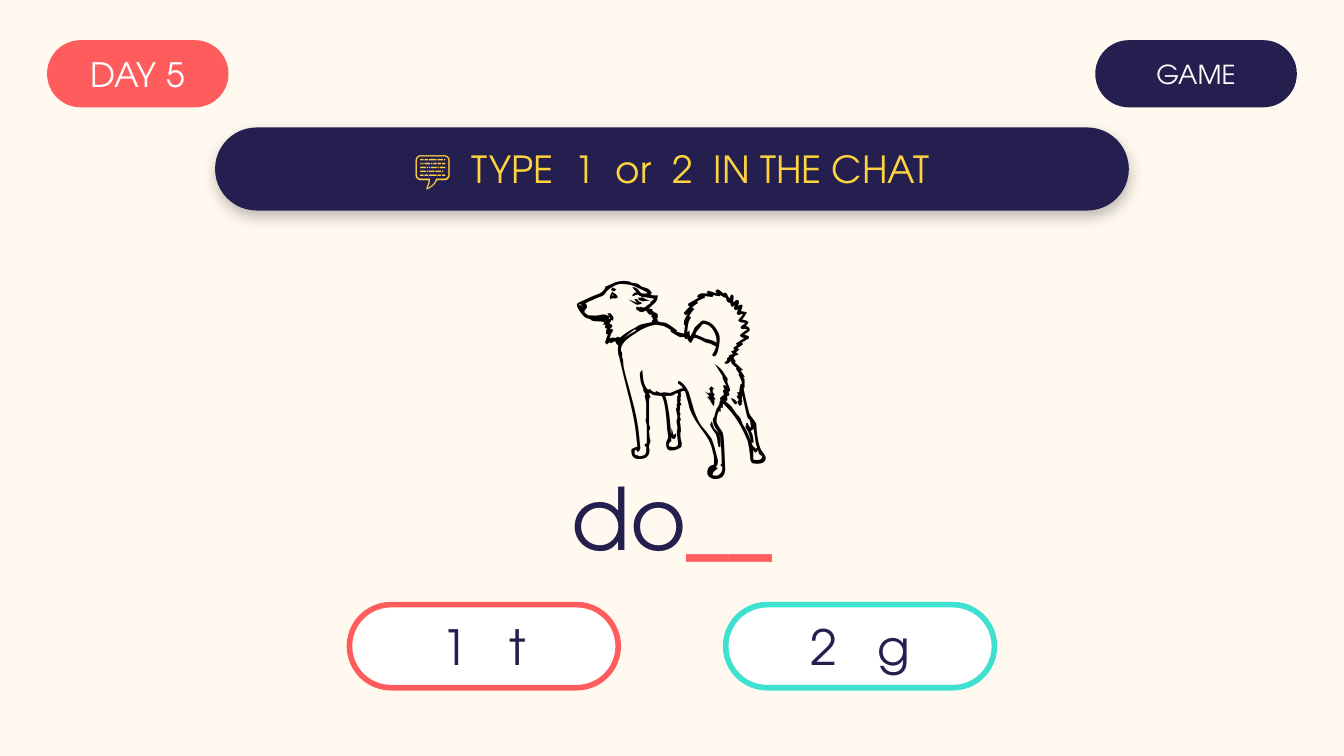
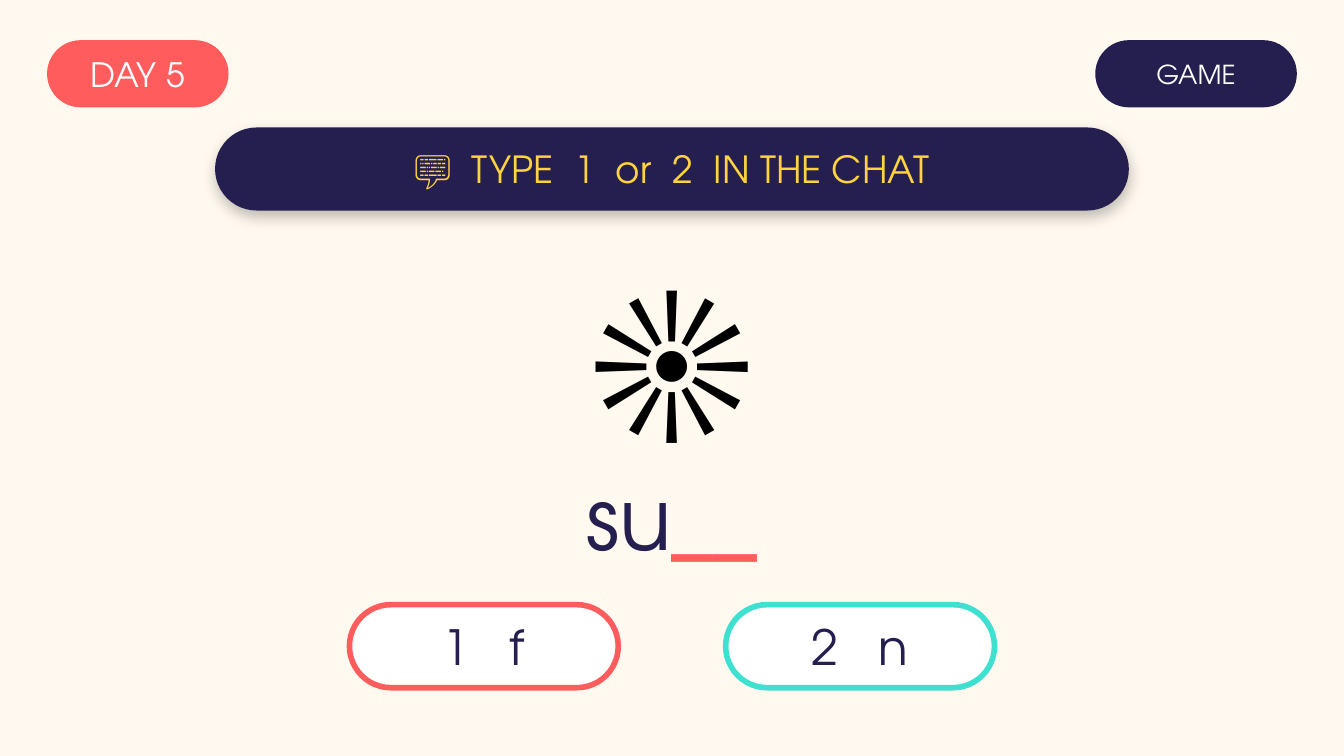
from dataclasses import dataclass
from itertools import chain

from lxml import etree
from pptx import Presentation
from pptx.dml.color import RGBColor
from pptx.enum.shapes import MSO_SHAPE
from pptx.enum.text import MSO_ANCHOR, PP_ALIGN
from pptx.oxml.ns import qn
from pptx.util import Cm, Pt

ROUNDED = MSO_SHAPE.ROUNDED_RECTANGLE
CENTER = PP_ALIGN.CENTER
TOP, MIDDLE = MSO_ANCHOR.TOP, MSO_ANCHOR.MIDDLE

CREAM, WHITE, BLACK = "FFF9EF", "FFFFFF", "000000"
NAVY, CORAL, TEAL, YELLOW = "241F4E", "FF5D5D", "3EE0CF", "FFD23F"
FONT, PICTURE_FONT = "TeX Gyre Adventor", "Calibri"

SLIDE_W, SLIDE_H = 25.4, 14.29
MARGIN = 0.89
BANNER_W, GAME_W = 17.27, 3.81
OPTION_W, OPTION_GAP = 5.08, 2.03
OPTION_COLORS = (CORAL, TEAL)
SPACE_EM = 0.277  # width of a space in the display font


@dataclass
class Box:
    left: float
    top: float
    width: float
    height: float

    def emu(self) -> tuple:
        return Cm(self.left), Cm(self.top), Cm(self.width), Cm(self.height)


@dataclass
class Span:
    text: str
    color: str
    bold: bool = False
    spacing: float = 0


@dataclass
class Pill:
    box: Box
    fill: str
    spans: list[Span]
    size: float
    line: str | None = None
    shadow: bool = False


@dataclass
class Question:
    picture: str
    stem: str
    letters: tuple[str, str]


QUESTIONS = [
    Question("🐕", "do", ("t", "g")),
    Question("☀️", "su", ("f", "n")),
]


def rgb(color: str) -> RGBColor:
    return RGBColor.from_string(color)


def spaced(words: list[str], color: str, size: float, spaces: int) -> list[Span]:
    """Join words with one space each, widened to the given number of spaces."""
    gap = Span(" ", color, spacing=(spaces - 1) * SPACE_EM * size)
    pairs = chain.from_iterable((gap, Span(word, color)) for word in words)
    return list(pairs)[1:]


def write(tf, spans: list[Span], *, size: float, font: str = FONT,
          anchor=MIDDLE, inset: bool = True) -> None:
    tf.word_wrap = True
    tf.vertical_anchor = anchor
    if not inset:
        tf.margin_left = tf.margin_right = tf.margin_top = tf.margin_bottom = 0
    p = tf.paragraphs[0]
    p.alignment = CENTER
    for span in spans:
        r = p.add_run()
        r.text = span.text
        r.font.name = font
        r.font.size = Pt(size)
        r.font.bold = span.bold
        r.font.color.rgb = rgb(span.color)
        if span.spacing:
            r.font._element.set("spc", str(round(span.spacing * 100)))


def add_text(s, box: Box, spans: list[Span], **style) -> None:
    write(s.shapes.add_textbox(*box.emu()).text_frame, spans, **style)


def add_soft_shadow(sp) -> None:
    effects = sp._element.spPr.find(qn("a:effectLst"))
    shadow = etree.SubElement(effects, qn("a:outerShdw"), blurRad=str(Pt(8)),
                              dist=str(Pt(3)), dir="5400000",
                              algn="ctr", rotWithShape="0")
    color = etree.SubElement(shadow, qn("a:srgbClr"), val=BLACK)
    etree.SubElement(color, qn("a:alpha"), val="25000")


def add_pill(s, pill: Pill) -> None:
    sp = s.shapes.add_shape(ROUNDED, *pill.box.emu())
    sp.adjustments[0] = 0.5
    sp.shadow.inherit = False
    sp.fill.solid()
    sp.fill.fore_color.rgb = rgb(pill.fill)
    if pill.line:
        sp.line.color.rgb = rgb(pill.line)
        sp.line.width = Pt(3)
    else:
        sp.line.fill.background()
    if pill.shadow:
        add_soft_shadow(sp)
    write(sp.text_frame, pill.spans, size=pill.size, inset=False)


HEADER = [
    Pill(Box(MARGIN, 0.76, 3.43, 1.27), CORAL, [Span("DAY 5", WHITE)], 18),
    Pill(Box(SLIDE_W - MARGIN - GAME_W, 0.76, GAME_W, 1.27), NAVY,
         [Span("GAME", WHITE)], 14),
    Pill(Box((SLIDE_W - BANNER_W) / 2, 2.41, BANNER_W, 1.57), NAVY,
         spaced(["💬", "TYPE", "1", "or", "2", "IN THE CHAT"], YELLOW, 20, 2),
         20, shadow=True),
]


def option_pills(letters: tuple[str, str]) -> list[Pill]:
    step = OPTION_W + OPTION_GAP
    first = (SLIDE_W - OPTION_W - step) / 2
    return [
        Pill(Box(first + i * step, 11.43, OPTION_W, 1.57), WHITE,
             spaced([str(i + 1), letter], NAVY, 26, 3), 26, line=color)
        for i, (letter, color) in enumerate(zip(letters, OPTION_COLORS))
    ]


def add_question(prs, question: Question) -> None:
    s = prs.slides.add_slide(prs.slide_layouts[6])
    s.background.fill.solid()
    s.background.fill.fore_color.rgb = rgb(CREAM)
    for pill in HEADER:
        add_pill(s, pill)
    add_text(s, Box(0, 4.11, SLIDE_W, 4.45), [Span(question.picture, BLACK)],
             size=115, font=PICTURE_FONT, anchor=TOP)
    add_text(s, Box(0, 8.89, SLIDE_W, 1.73),
             [Span(question.stem, NAVY), Span("__", CORAL, bold=True)], size=46)
    for pill in option_pills(question.letters):
        add_pill(s, pill)


def main() -> None:
    prs = Presentation()
    prs.slide_width, prs.slide_height = Cm(SLIDE_W), Cm(SLIDE_H)
    for question in QUESTIONS:
        add_question(prs, question)
    prs.save("out.pptx")


if __name__ == "__main__":
    main()
